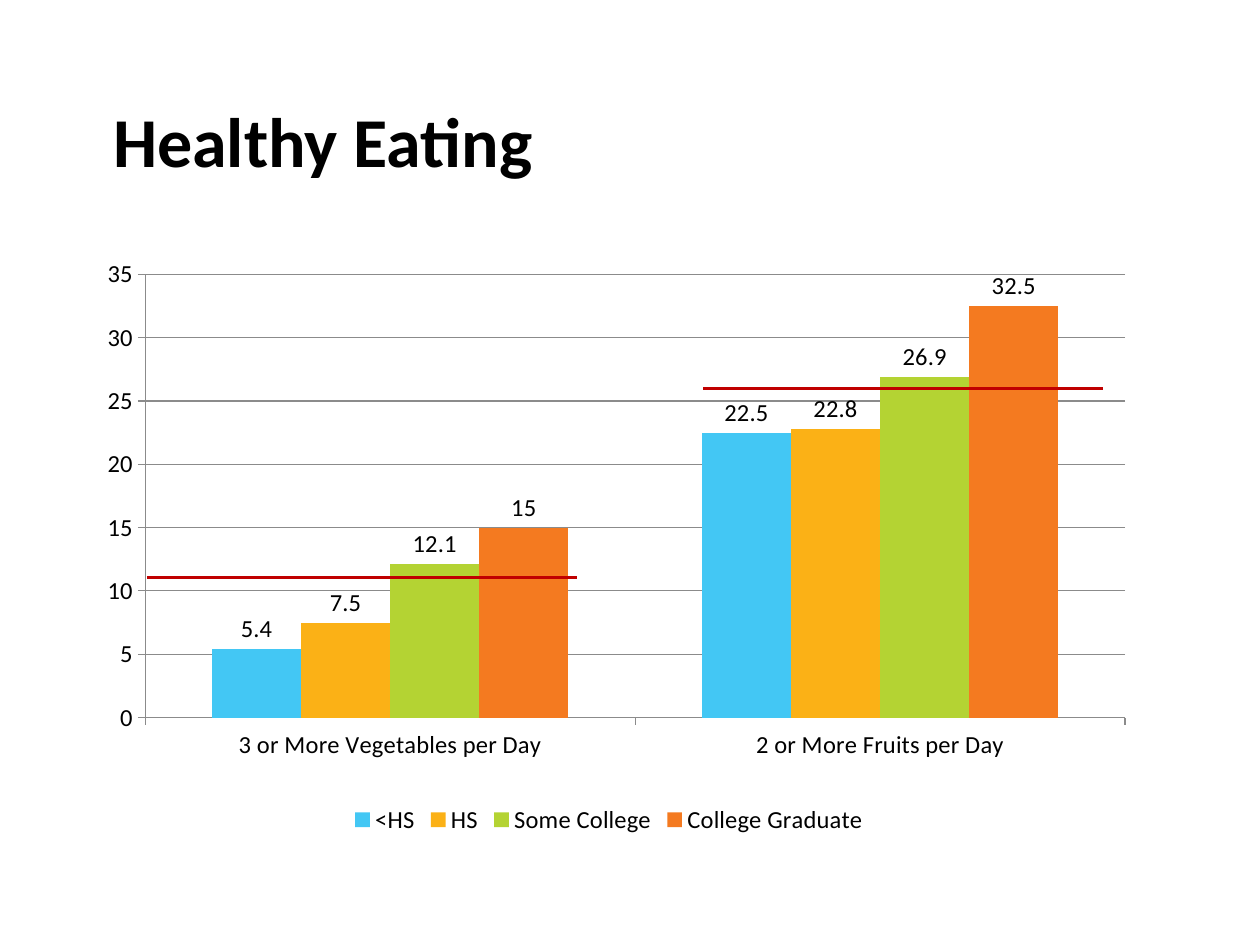
import pptx
import pptx.chart.data
import pptx.dml.color
import pptx.enum.chart
import pptx.enum.shapes
import pptx.enum.text
import pptx.oxml
import pptx.oxml.ns
import pptx.util

RGBColor = pptx.dml.color.RGBColor
BLACK = RGBColor(0x00, 0x00, 0x00)
GRAY = RGBColor(0x8B, 0x8B, 0x8B)
RED = RGBColor(0xC0, 0x00, 0x00)
BLUE = RGBColor(0x43, 0xC7, 0xF4)
AMBER = RGBColor(0xFB, 0xB1, 0x16)
GREEN = RGBColor(0xB4, 0xD3, 0x33)
ORANGE = RGBColor(0xF4, 0x7A, 0x20)

CATEGORIES = ["3 or More Vegetables per Day", "2 or More Fruits per Day"]
EDUCATION_LEVELS = [
    ("<HS", [5.4, 22.5], BLUE),
    ("HS", [7.5, 22.8], AMBER),
    ("Some College", [12.1, 26.9], GREEN),
    ("College Graduate", [15, 32.5], ORANGE),
]
PLOT_AREA = {"x": 0.067, "y": 0.038, "w": 0.915, "h": 0.754}


class SlideBuilder:
    font_name = "Calibri"
    title_size = 40
    label_size = 14
    columns = 120
    rows = 90

    def __init__(self, presentation):
        self.cell_width = presentation.slide_width / self.columns
        self.cell_height = presentation.slide_height / self.rows
        self.slide = presentation.slides.add_slide(presentation.slide_layouts[6])

    def place(self, left, top, width, height):
        return (
            round(left * self.cell_width),
            round(top * self.cell_height),
            round(width * self.cell_width),
            round(height * self.cell_height),
        )

    def style_font(self, font, size, bold=False):
        font.name = self.font_name
        font.size = pptx.util.Pt(size)
        font.bold = bold
        font.color.rgb = BLACK

    def add_title(self, text, *box):
        frame = self.slide.shapes.add_textbox(*self.place(*box)).text_frame
        frame.word_wrap = True
        frame.vertical_anchor = pptx.enum.text.MSO_ANCHOR.MIDDLE
        run = frame.paragraphs[0].add_run()
        run.text = text
        self.style_font(run.font, self.title_size, bold=True)

    def add_column_chart(self, categories, series_list, *box):
        data = pptx.chart.data.CategoryChartData()
        data.categories = categories
        for name, values, _ in series_list:
            data.add_series(name, values)
        chart = self.slide.shapes.add_chart(
            pptx.enum.chart.XL_CHART_TYPE.COLUMN_CLUSTERED, *self.place(*box), data
        ).chart
        chart.has_title = False
        self.style_font(chart.font, 18)
        chart.has_legend = True
        chart.legend.position = pptx.enum.chart.XL_LEGEND_POSITION.BOTTOM
        chart.legend.include_in_layout = False
        self.style_font(chart.legend.font, self.label_size)
        for axis in (chart.category_axis, chart.value_axis):
            axis.major_tick_mark = pptx.enum.chart.XL_TICK_MARK.OUTSIDE
            axis.format.line.color.rgb = GRAY
            self.style_font(axis.tick_labels.font, self.label_size)
        chart.value_axis.minimum_scale = 0
        chart.value_axis.maximum_scale = 35
        chart.value_axis.major_unit = 5
        chart.value_axis.has_major_gridlines = True
        chart.value_axis.major_gridlines.format.line.color.rgb = GRAY
        plot = chart.plots[0]
        plot.gap_width = 150
        plot.overlap = 0
        plot.vary_by_categories = False
        for series, (_, _, color) in zip(plot.series, series_list):
            series.format.fill.solid()
            series.format.fill.fore_color.rgb = color
            labels = series.data_labels
            labels.show_value = True
            labels.position = pptx.enum.chart.XL_LABEL_POSITION.OUTSIDE_END
            self.style_font(labels.font, self.label_size)
        self.set_plot_area(chart)

    def set_plot_area(self, chart):
        plot_area = chart.element.xpath("c:chart/c:plotArea")[0]
        for layout in plot_area.xpath("c:layout"):
            plot_area.remove(layout)
        settings = {"layoutTarget": "inner", "xMode": "edge", "yMode": "edge", **PLOT_AREA}
        children = "".join(f'<c:{key} val="{value}"/>' for key, value in settings.items())
        plot_area.insert(0, pptx.oxml.parse_xml(
            f'<c:layout {pptx.oxml.ns.nsdecls("c")}>'
            f"<c:manualLayout>{children}</c:manualLayout></c:layout>"
        ))

    def add_average_line(self, left, right, row):
        connector = self.slide.shapes.add_connector(
            pptx.enum.shapes.MSO_CONNECTOR.STRAIGHT,
            *self.place(left, row, right, row)
        )
        connector.line.color.rgb = RED
        connector.line.width = pptx.util.Pt(1.25)
        properties = connector.element.spPr
        properties.append(pptx.oxml.parse_xml(
            f'<a:effectLst {pptx.oxml.ns.nsdecls("a")}/>'
        ))


def main():
    presentation = pptx.Presentation()
    presentation.slide_width = pptx.util.Inches(10)
    presentation.slide_height = pptx.util.Inches(7.5)
    builder = SlideBuilder(presentation)
    builder.add_column_chart(CATEGORIES, EDUCATION_LEVELS, 7, 24, 102, 56)
    builder.add_title("Healthy Eating", 9.6, 5.8, 83.4, 15)
    builder.add_average_line(67, 105, 37)
    builder.add_average_line(14, 55, 55)
    presentation.save("out.pptx")


if __name__ == "__main__":
    main()
